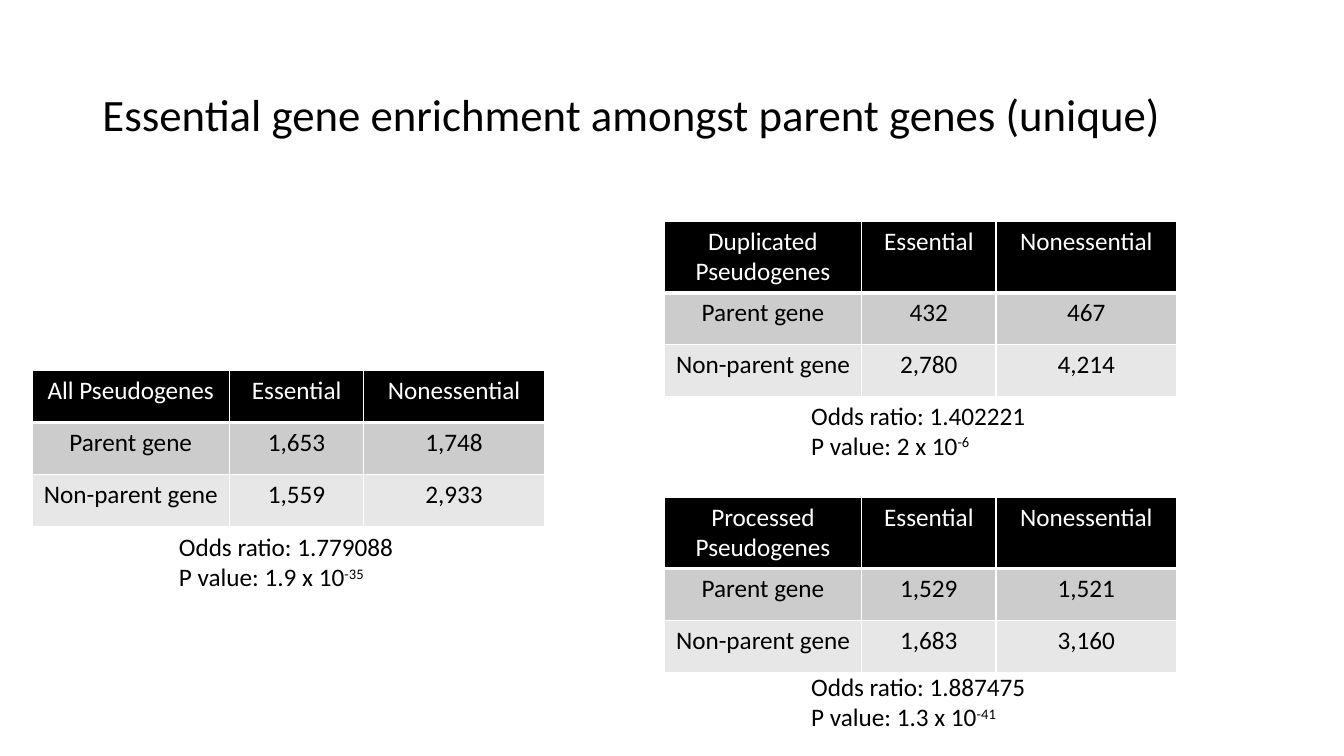
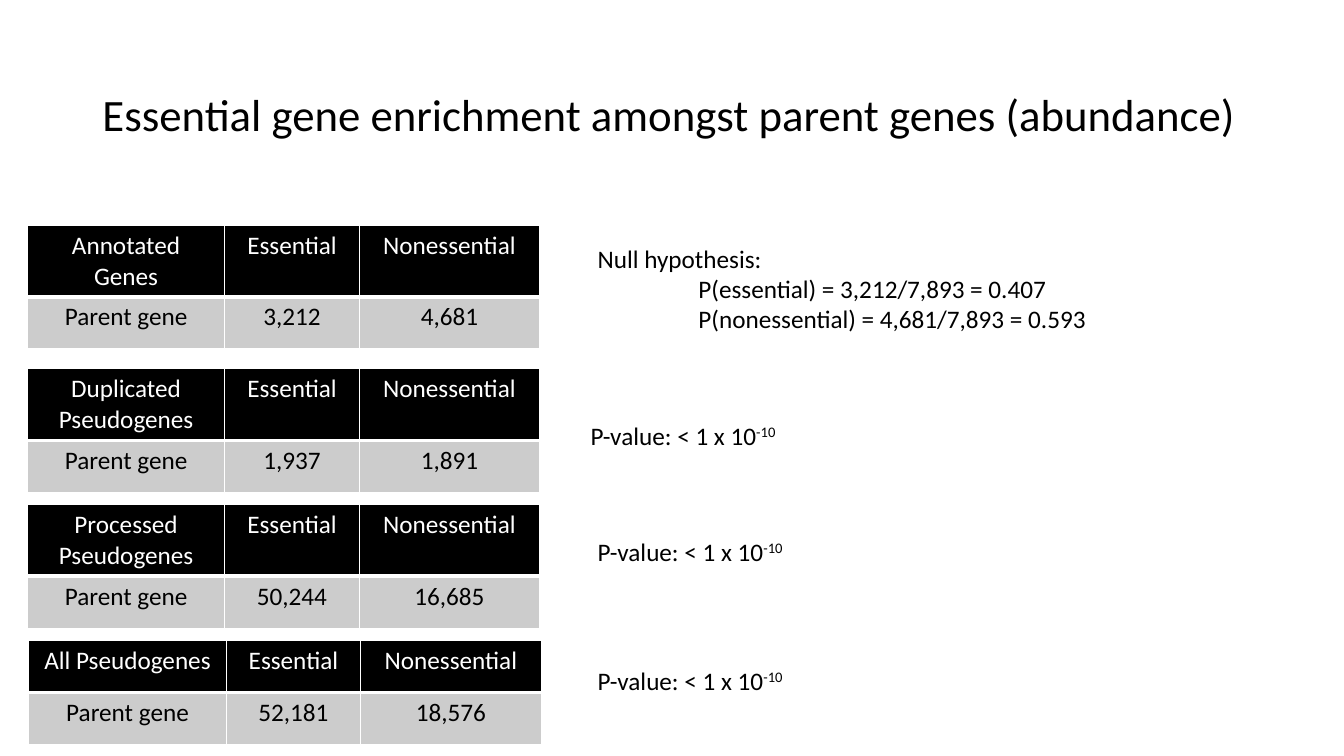
from pptx import Presentation as Deck
from pptx.dml.color import RGBColor as Rgb
from pptx.enum.text import MSO_ANCHOR as Anchor, MSO_AUTO_SIZE as Fit, PP_ALIGN as Align
from pptx.oxml import parse_xml
from pptx.oxml.ns import nsdecls
from pptx.util import Pt

HUES = {"ink": "000000", "paper": "FFFFFF", "odd": "CCCCCC", "even": "E7E7E7"}
BODY = {"name": "Calibri", "size": Pt(18)}
HEAD = {"name": "Calibri", "size": Pt(32)}
COLS = (141, 96, 129)
ROW, TALL = 37.2, 51
TAB = 72


def hue(name):
    return Rgb.from_string(HUES[name])


def style(font, form, tint="ink"):
    for key, value in form.items():
        setattr(font, key, value)
    font.color.rgb = hue(tint)


# Title placeholder
def add_title(slide, text):
    title = slide.shapes.title
    place = {"left": 66, "top": 31.5, "width": 828, "height": 104.4}
    for key, value in place.items():
        setattr(title, key, Pt(value))
    frame = title.text_frame
    frame.text = text
    frame.auto_size, frame.vertical_anchor = Fit.NONE, Anchor.MIDDLE
    para = frame.paragraphs[0]
    para.alignment, para.line_spacing = Align.LEFT, 0.9
    style(para.font, HEAD)


# White cell borders, with a heavier rule under the header
def add_edges(cell, base):
    props = cell._tc.get_or_add_tcPr()
    for side, width in (("L", 1), ("R", 1), ("T", 1), ("B", base)):
        props.append(parse_xml(
            f'<a:ln{side} {nsdecls("a")} w="{Pt(width)}"><a:solidFill>'
            f'<a:srgbClr val="{HUES["paper"]}"/></a:solidFill></a:ln{side}>'))


def fill_cell(cell, text, row):
    add_edges(cell, 1 if row else 3)
    cell.fill.solid()
    cell.fill.fore_color.rgb = hue(("ink", "odd", "even")[row])
    cell.text = text
    para = cell.text_frame.paragraphs[0]
    para.alignment = Align.CENTER
    style(para.font, BODY, "ink" if row else "paper")


# Count table: a header row and one row for each kind of gene
def add_counts(slide, left, top, name, counts, head=TALL):
    kinds = ("Parent gene", "Non-parent gene")
    rows = [(name, "Essential", "Nonessential")]
    rows += [(kind, *pair) for kind, pair in zip(kinds, counts)]
    high = head + ROW * len(counts)
    grid = slide.shapes.add_table(
        len(rows), len(COLS), Pt(left), Pt(top), Pt(sum(COLS)), Pt(high)).table
    for col, width in zip(grid.columns, COLS):
        col.width = Pt(width)
    for r, row in enumerate(rows):
        grid.rows[r].height = Pt(ROW if r else head)
        for c, text in enumerate(row):
            fill_cell(grid.cell(r, c), text, r)


# Text box: each line is (text, power, indent)
def add_note(slide, box, lines, wrap=False):
    frame = slide.shapes.add_textbox(*map(Pt, box)).text_frame
    frame.word_wrap, frame.auto_size = wrap, Fit.SHAPE_TO_FIT_TEXT
    for i, (text, power, indent) in enumerate(lines):
        para = frame.add_paragraph() if i else frame.paragraphs[0]
        if indent:
            para._p.get_or_add_pPr().set("marL", str(Pt(indent)))
        for part in filter(None, (text, power)):
            run = para.add_run()
            run.text = part
            style(run.font, BODY)
        if power:
            run._r.get_or_add_rPr().set("baseline", "30000")


def add_slide(deck, title):
    slide = deck.slides.add_slide(deck.slide_layouts[5])
    add_title(slide, title)
    return slide


def draw_unique(deck):
    slide = add_slide(deck, "Essential gene enrichment amongst parent genes (unique)")
    sets = (
        (474.5, 157.9, "Duplicated Pseudogenes", TALL,
         (("432", "467"), ("2,780", "4,214")), 282.2, "1.402221", "2", "-6"),
        (474.5, 355, "Processed Pseudogenes", TALL,
         (("1,529", "1,521"), ("1,683", "3,160")), 475.9, "1.887475", "1.3", "-41"),
        (22.9, 264.6, "All Pseudogenes", ROW,
         (("1,653", "1,748"), ("1,559", "2,933")), 376, "1.779088", "1.9", "-35"),
    )
    for left, top, name, head, counts, low, odds, base, power in sets:
        add_counts(slide, left, top, name, counts, head)
        add_note(slide, (left + 97.8, low, 169.2, 51),
                 ((f"Odds ratio: {odds}", "", 0),
                  (f"P value: {base} x 10", power, 0)))


def draw_abundance(deck):
    slide = add_slide(deck, "Essential gene enrichment amongst parent genes (abundance)")
    sets = (
        (19.6, 160.9, "Annotated Genes", TALL, ("3,212", "4,681")),
        (19.6, 263.4, "Duplicated Pseudogenes", TALL, ("1,937", "1,891")),
        (19.6, 360.5, "Processed Pseudogenes", TALL, ("50,244", "16,685")),
        (20.6, 457.4, "All Pseudogenes", ROW, ("52,181", "18,576")),
    )
    for left, top, name, head, pair in sets:
        add_counts(slide, left, top, name, (pair,), head)
    add_note(slide, (419.8, 170, 474.5, 72.7),
             (("Null hypothesis:", "", 0),
              ("P(essential) = 3,212/7,893 = 0.407", "", TAB),
              ("P(nonessential) = 4,681/7,893 = 0.593", "", TAB)), True)
    for left, top in ((414.7, 296.6), (419.8, 379.4), (419.8, 471.6)):
        add_note(slide, (left, top, 150.5, 29), (("P-value: < 1 x 10", "-10", 0),))


def main():
    deck = Deck()
    deck.slide_width, deck.slide_height = Pt(960), Pt(540)
    draw_unique(deck)
    draw_abundance(deck)
    deck.save("out.pptx")


if __name__ == "__main__":
    main()
